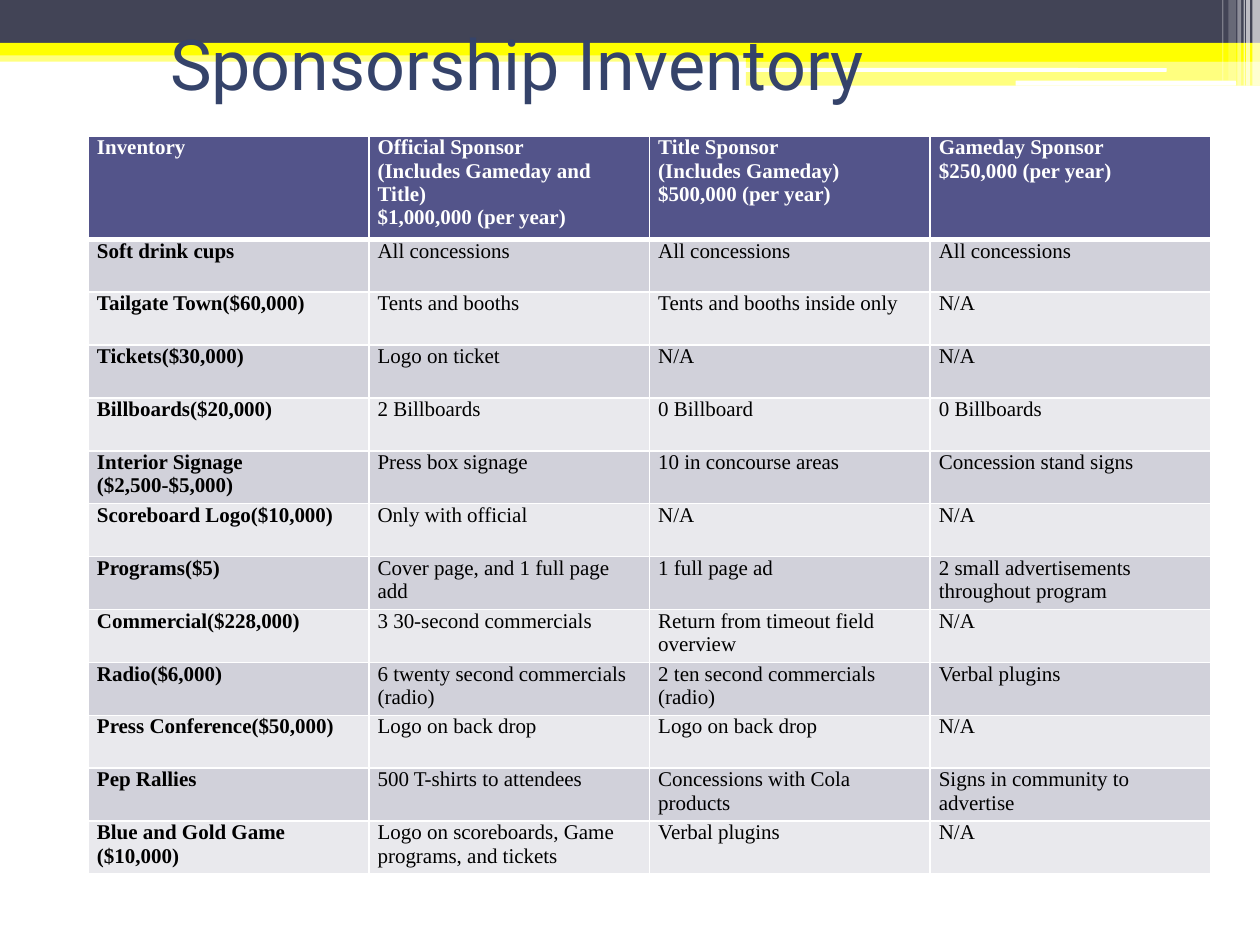
from dataclasses import dataclass

from lxml import etree
from pptx import Presentation
from pptx.dml.color import RGBColor
from pptx.enum.shapes import MSO_SHAPE
from pptx.enum.text import MSO_ANCHOR, MSO_AUTO_SIZE, PP_ALIGN
from pptx.oxml.ns import qn
from pptx.util import Inches, Pt

RECT, ROUND = MSO_SHAPE.RECTANGLE, MSO_SHAPE.ROUNDED_RECTANGLE
TOP, MIDDLE = MSO_ANCHOR.TOP, MSO_ANCHOR.MIDDLE
LEFT, NO_FIT = PP_ALIGN.LEFT, MSO_AUTO_SIZE.NONE


@dataclass(frozen=True)
class Theme:
    """Colours, fonts and type sizes of the slide."""
    white: str = "FFFFFF"
    black: str = "000000"
    yellow: str = "FFFF00"
    slate: str = "424456"
    navy: str = "35436A"
    header: str = "53548A"
    bands: tuple = ("D1D1DA", "E9E9ED")
    title_font: str = "Roboto"
    table_font: str = "Times New Roman"
    title_size: int = 40
    table_size: int = 12


THEME = Theme()

BANNER = [
    (RECT, 0, 0.4, 10, 0.09, THEME.yellow, 50),
    (RECT, 0, 0, 10, 0.34, THEME.slate, 100),
    (RECT, 0, 0.34, 10, 0.1, THEME.yellow, 100),
    (RECT, 5.92, 0.39, 4.08, 0.1, THEME.yellow, 100),
    (RECT, 5.92, 0.48, 4.08, 0.2, THEME.yellow, 50),
    (ROUND, 5.91, 0.54, 3.35, 0.03, THEME.white, 100),
    (ROUND, 8.06, 0.64, 1.75, 0.04, THEME.white, 100),
]

STRIPES = [
    (9.94, 0.06, 0.68, 65),
    (9.89, 0.03, 0.68, 65),
    (9.87, 0.01, 0.68, 60),
    (9.82, 0.03, 0.68, 40),
    (9.75, 0.06, 0.64, 20),
    (9.7, 0.01, 0.64, 30),
]

INVENTORY = [
    ("Inventory",
     "Official Sponsor\n(Includes Gameday and Title)\n$1,000,000 (per year)",
     "Title Sponsor\n(Includes Gameday)\n$500,000 (per year)",
     "Gameday Sponsor\n$250,000 (per year)"),
    ("Soft drink cups", "All concessions", "All concessions", "All concessions"),
    ("Tailgate Town($60,000)", "Tents and booths", "Tents and booths inside only", "N/A"),
    ("Tickets($30,000)", "Logo on ticket", "N/A", "N/A"),
    ("Billboards($20,000)", "2 Billboards", "0 Billboard", "0 Billboards"),
    ("Interior Signage\n($2,500-$5,000)", "Press box signage", "10 in concourse areas",
     "Concession stand signs"),
    ("Scoreboard Logo($10,000)", "Only with official", "N/A", "N/A"),
    ("Programs($5)", "Cover page, and 1 full page add", "1 full page ad",
     "2 small advertisements throughout program"),
    ("Commercial($228,000)", "3 30-second commercials",
     "Return from timeout field overview", "N/A"),
    ("Radio($6,000)", "6 twenty second commercials (radio)",
     "2 ten second commercials (radio)", "Verbal plugins"),
    ("Press Conference($50,000)", "Logo on back drop", "Logo on back drop", "N/A"),
    ("Pep Rallies", "500 T-shirts to attendees", "Concessions with Cola products",
     "Signs in community to advertise"),
    ("Blue and Gold Game\n($10,000)", "Logo on scoreboards, Game programs, and tickets",
     "Verbal plugins", "N/A"),
]


def format_text(tf, font, size, color, bold=False):
    """Apply one type style to every run of a text frame."""
    for p in tf.paragraphs:
        p.alignment = LEFT
        for r in p.runs:
            r.font.name, r.font.size, r.font.bold = font, Pt(size), bold
            r.font.color.rgb = RGBColor.from_string(color)


def add_bar(s, kind, x, y, w, h, color, opacity):
    """Add a borderless bar with an opacity in percent."""
    sp = s.shapes.add_shape(kind, Inches(x), Inches(y), Inches(w), Inches(h))
    sp.shadow.inherit = False
    sp.line.fill.background()
    sp.fill.solid()
    sp.fill.fore_color.rgb = RGBColor.from_string(color)
    if opacity < 100:
        clr = next(sp.element.iter(qn("a:srgbClr")))
        etree.SubElement(clr, qn("a:alpha"), val=str(opacity * 1000))


def add_banner(s):
    """Draw the top banner and its stripes."""
    for bar in BANNER:
        add_bar(s, *bar)
    for x, w, h, opacity in STRIPES:
        add_bar(s, RECT, x, 0, w, h, THEME.white, opacity)


def set_title(s, text):
    """Fill the title placeholder and bring it in front of the banner."""
    sp = s.shapes.title
    sp.left, sp.top, sp.width, sp.height = map(Inches, (1.25, 0.05, 8.2, 0.89))
    tf = sp.text_frame
    tf.text = text
    tf.auto_size, tf.vertical_anchor = NO_FIT, MIDDLE
    format_text(tf, THEME.title_font, THEME.title_size, THEME.navy)
    sp.element.getparent().append(sp.element)


def set_borders(cell, bottom, top):
    """Draw white cell borders with the given bottom and top widths."""
    tc_pr = cell._tc.get_or_add_tcPr()
    for side, width in (("L", 1), ("R", 1), ("T", top), ("B", bottom)):
        ln = etree.SubElement(tc_pr, qn(f"a:ln{side}"), w=str(Pt(width)))
        fill = etree.SubElement(ln, qn("a:solidFill"))
        etree.SubElement(fill, qn("a:srgbClr"), val=THEME.white)


def format_cell(cell, row, col):
    """Style a cell by its place in the table."""
    header = row == 0
    cell.margin_left = cell.margin_right = Inches(0.07)
    cell.margin_top = cell.margin_bottom = 0
    cell.vertical_anchor = TOP
    set_borders(cell, bottom=3 if header else 1, top=3 if row == 1 else 1)
    cell.fill.solid()
    fill = THEME.header if header else THEME.bands[(row - 1) % 2]
    cell.fill.fore_color.rgb = RGBColor.from_string(fill)
    format_text(cell.text_frame, THEME.table_font, THEME.table_size,
                THEME.white if header else THEME.black, header or col == 0)


def add_inventory(s, rows):
    """Add the sponsorship table."""
    frame = s.shapes.add_table(len(rows), len(rows[0]), Inches(0.7), Inches(1.08),
                               Inches(8.91), Inches(5.86))
    table = frame.table
    for i, texts in enumerate(rows):
        table.rows[i].height = Inches(0.42 if i else 0.82)
        for j, text in enumerate(texts):
            cell = table.cell(i, j)
            cell.text = text
            format_cell(cell, i, j)


def main():
    """Build and save the slide."""
    prs = Presentation()
    prs.slide_width, prs.slide_height = Inches(10), Inches(7.5)
    s = prs.slides.add_slide(prs.slide_layouts[5])
    add_banner(s)
    set_title(s, "Sponsorship Inventory")
    add_inventory(s, INVENTORY)
    prs.save("out.pptx")


if __name__ == "__main__":
    main()
